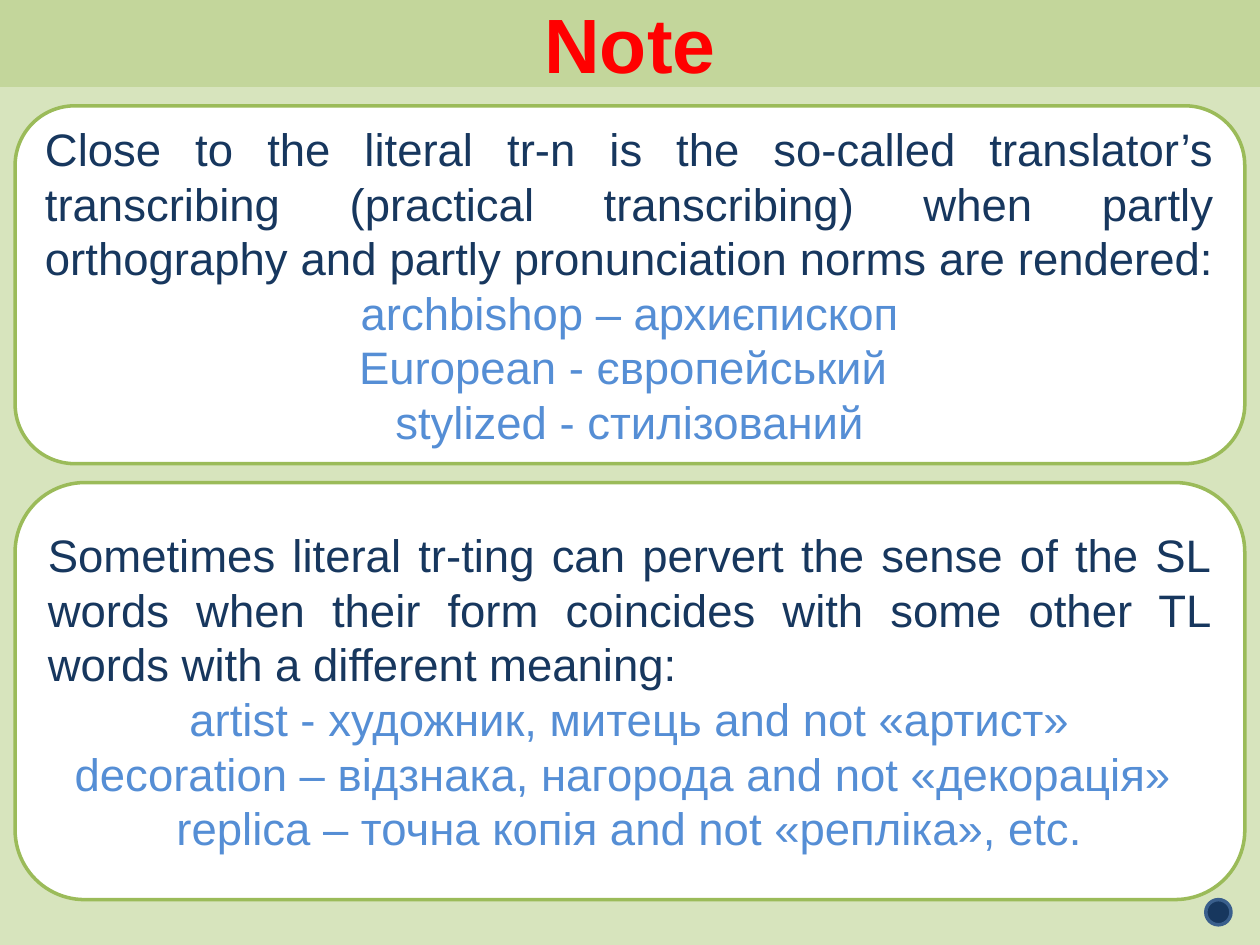
"""Build the "Note" slide on literal translation with two rounded text panels."""
from pptx import Presentation
from pptx.dml.color import RGBColor as RGB
from pptx.enum.shapes import MSO_SHAPE as SHAPE
from pptx.enum.text import MSO_ANCHOR as ANCHOR, MSO_AUTO_SIZE as AUTO, PP_ALIGN as ALIGN
from pptx.util import Inches, Pt

THEME = {
    "font": "Arial", "title_size": 44, "body_size": 26, "line": 2,
    "bg": "D7E4BD", "band": "C3D69B", "title": "FF0000", "panel": "FFFFFF",
    "border": "9BBB59", "text": "17375E", "example": "558ED5", "dot_line": "3A5F8C",
}
MARGIN = 0.12
PANELS = [
    (0.84, 2.84,
     "Close to the literal tr-n is the so-called translator’s transcribing "
     "(practical transcribing) when partly orthography and partly pronunciation "
     "norms are rendered: ",
     ["archbishop – архиєпископ", "European - європейський ", "stylized - стилізований"]),
    (3.83, 3.31,
     "Sometimes literal tr-ting can pervert the sense of the SL words when their "
     "form coincides with some other TL words with a different meaning: ",
     ["artist - художник, митець and not «артист»",
      "decoration – відзнака, нагорода and not «декорація» ",
      "replica – точна копія and not «репліка», etc."]),
]


def paint(sp, fill, line):
    sp.fill.solid()
    sp.fill.fore_color.rgb = RGB.from_string(THEME[fill])
    sp.line.color.rgb = RGB.from_string(THEME[line])
    sp.line.width = Pt(THEME["line"])


def write(p, text, align, size, color, bold=False):
    p.alignment = align
    r = p.add_run()
    r.text = text
    fmt = {"name": THEME["font"], "size": Pt(THEME[size]), "bold": bold}
    for key, value in fmt.items():
        setattr(r.font, key, value)
    r.font.color.rgb = RGB.from_string(THEME[color])


prs = Presentation()
prs.slide_width, prs.slide_height = Inches(10), Inches(7.5)
s = prs.slides.add_slide(prs.slide_layouts[5])
s.background.fill.solid()
s.background.fill.fore_color.rgb = RGB.from_string(THEME["bg"])

title = s.shapes.title
box = {"left": 0, "top": 0, "width": prs.slide_width, "height": Inches(0.68)}
for key, value in box.items():
    setattr(title, key, value)
paint(title, "band", "band")
title.text_frame.auto_size = AUTO.NONE
title.text_frame.vertical_anchor = ANCHOR.MIDDLE
write(title.text_frame.paragraphs[0], "Note", ALIGN.CENTER, "title_size", "title", True)

for top, height, intro, examples in PANELS:
    sp = s.shapes.add_shape(SHAPE.ROUNDED_RECTANGLE, Inches(MARGIN), Inches(top),
                            prs.slide_width - 2 * Inches(MARGIN), Inches(height))
    sp.shadow.inherit = False
    paint(sp, "panel", "border")
    tf = sp.text_frame
    tf.word_wrap = True
    tf.vertical_anchor = ANCHOR.MIDDLE
    write(tf.paragraphs[0], intro, ALIGN.JUSTIFY, "body_size", "text")
    for example in examples:
        write(tf.add_paragraph(), example, ALIGN.CENTER, "body_size", "example")

dot = s.shapes.add_shape(SHAPE.OVAL, Inches(9.57), Inches(7.14), Inches(0.2), Inches(0.2))
dot.shadow.inherit = False
paint(dot, "text", "dot_line")

prs.save("out.pptx")
